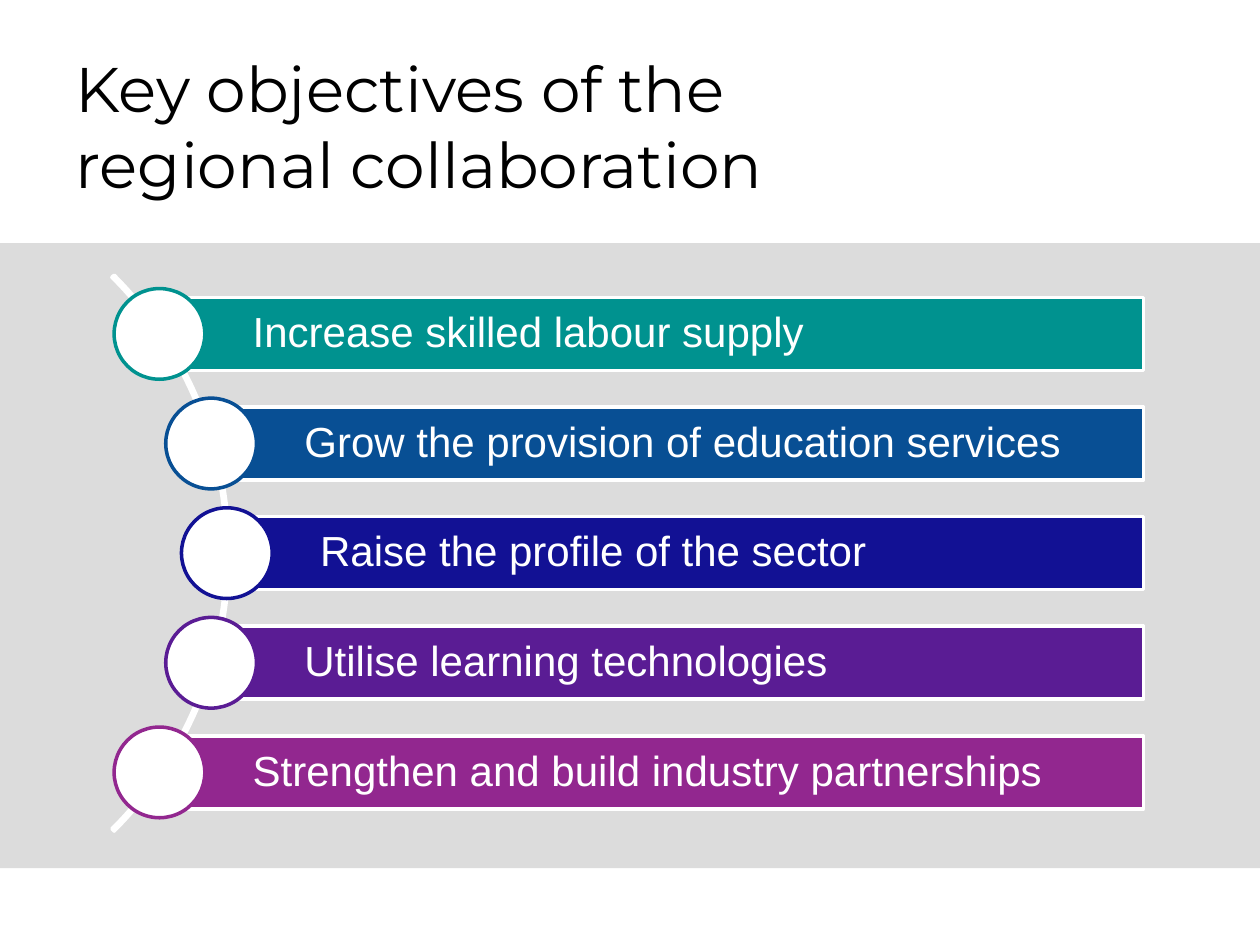
from math import sqrt

from pptx import Presentation
from pptx.dml.color import RGBColor
from pptx.enum.shapes import MSO_SHAPE
from pptx.enum.text import MSO_ANCHOR, PP_ALIGN
from pptx.util import Inches, Pt

UNIT = Inches(0.1)  # the grid has 100 columns and 75 rows
WHITE = "FFFFFF"
OBJECTIVES = [
    ("Increase skilled labour supply", "00928F"),
    ("Grow the provision of education services", "084F94"),
    ("Raise the profile of the sector", "121194"),
    ("Utilise learning technologies", "5A1C94"),
    ("Strengthen and build industry partnerships", "92278F"),
]
ARC_COLUMN, ARC_ROW, ARC_RADIUS = -13, 43.9, 31.2
BEAD_TRACK = 31  # distance of bead centres from the arc's centre
ROW_STEP = 8.7
BAR_RIGHT, BAR_HEIGHT, BEAD_SIZE = 90.75, 5.8, 7.2


def color(value):
    return RGBColor.from_string(value)


class ObjectivesSlide:
    title_style = {"name": "Montserrat", "size": Pt(36)}
    bar_style = {"name": "Arial", "size": Pt(24)}

    def __init__(self):
        self.deck = Presentation()
        self.deck.slide_width, self.deck.slide_height = 100 * UNIT, 75 * UNIT
        self.page = self.deck.slides.add_slide(self.deck.slide_layouts[6])

    def shape(self, kind, area, fill, line=None):
        """Draw a preset shape; area is column, row, width and height."""
        shape = self.page.shapes.add_shape(kind, *(round(n * UNIT) for n in area))
        shape.shadow.inherit = False
        shape.fill.solid()
        shape.fill.fore_color.rgb = color(fill)
        if line:
            shape.line.color.rgb = color(line)
            shape.line.width = Pt(2)
        else:
            shape.line.fill.background()
        return shape

    def text(self, box, words, style, ink, left=1, line_spacing=1.0):
        frame = box.text_frame
        margins = {"margin_left": round(left * UNIT), "margin_right": Inches(0.07),
                   "margin_top": Inches(0.05), "margin_bottom": Inches(0.05)}
        layout = {"word_wrap": True, "vertical_anchor": MSO_ANCHOR.MIDDLE}
        for name, value in {**margins, **layout}.items():
            setattr(frame, name, value)
        para = frame.paragraphs[0]
        para.text = words
        para.alignment = PP_ALIGN.LEFT
        para.line_spacing = line_spacing
        for span in para.runs:
            for name, value in style.items():
                setattr(span.font, name, value)
            span.font.color.rgb = color(ink)

    def title(self, words, area):
        box = self.page.shapes.add_textbox(*(round(n * UNIT) for n in area))
        self.text(box, words, self.title_style, "000000")

    def arc(self):
        area = (ARC_COLUMN - ARC_RADIUS, ARC_ROW - ARC_RADIUS,
                2 * ARC_RADIUS, 2 * ARC_RADIUS)
        arc = self.shape(MSO_SHAPE.BLOCK_ARC, area, "7D7D7D", WHITE)
        # start angle, end angle (315 and 45 degrees) and thickness
        for index, value in enumerate((189, 27, 0.004)):
            arc.adjustments[index] = value

    def objective(self, words, accent, offset):
        """Draw a bar and its bead, offset rows from the arc's centre."""
        column = ARC_COLUMN + sqrt(BEAD_TRACK ** 2 - offset ** 2)
        row = ARC_ROW + offset
        bar = self.shape(MSO_SHAPE.RECTANGLE,
                         (column, row - BAR_HEIGHT / 2, BAR_RIGHT - column, BAR_HEIGHT),
                         accent, WHITE)
        self.text(bar, words, self.bar_style, WHITE, left=7.4, line_spacing=0.9)
        self.shape(MSO_SHAPE.OVAL,
                   (column - BEAD_SIZE / 2, row - BEAD_SIZE / 2, BEAD_SIZE, BEAD_SIZE),
                   WHITE, accent)


def main():
    slide = ObjectivesSlide()
    slide.shape(MSO_SHAPE.RECTANGLE, (0, 19.3, 100, 49.6), "DCDCDC")
    slide.title("Key objectives of the\vregional collaboration", (5, 5.2, 90, 9.5))
    slide.arc()
    middle = len(OBJECTIVES) // 2
    for index, (words, accent) in enumerate(OBJECTIVES):
        slide.objective(words, accent, (index - middle) * ROW_STEP)
    slide.deck.save("out.pptx")


if __name__ == "__main__":
    main()
